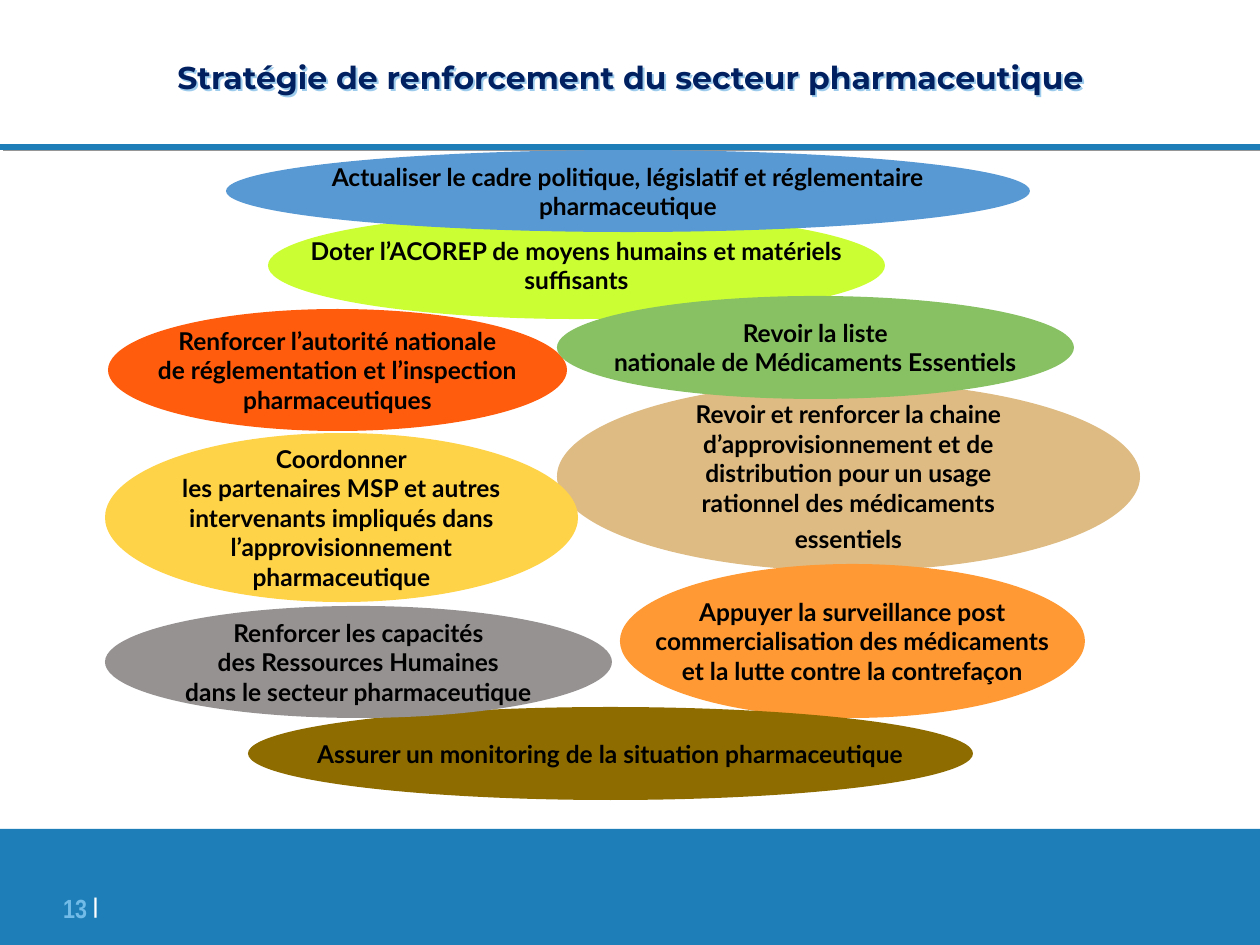
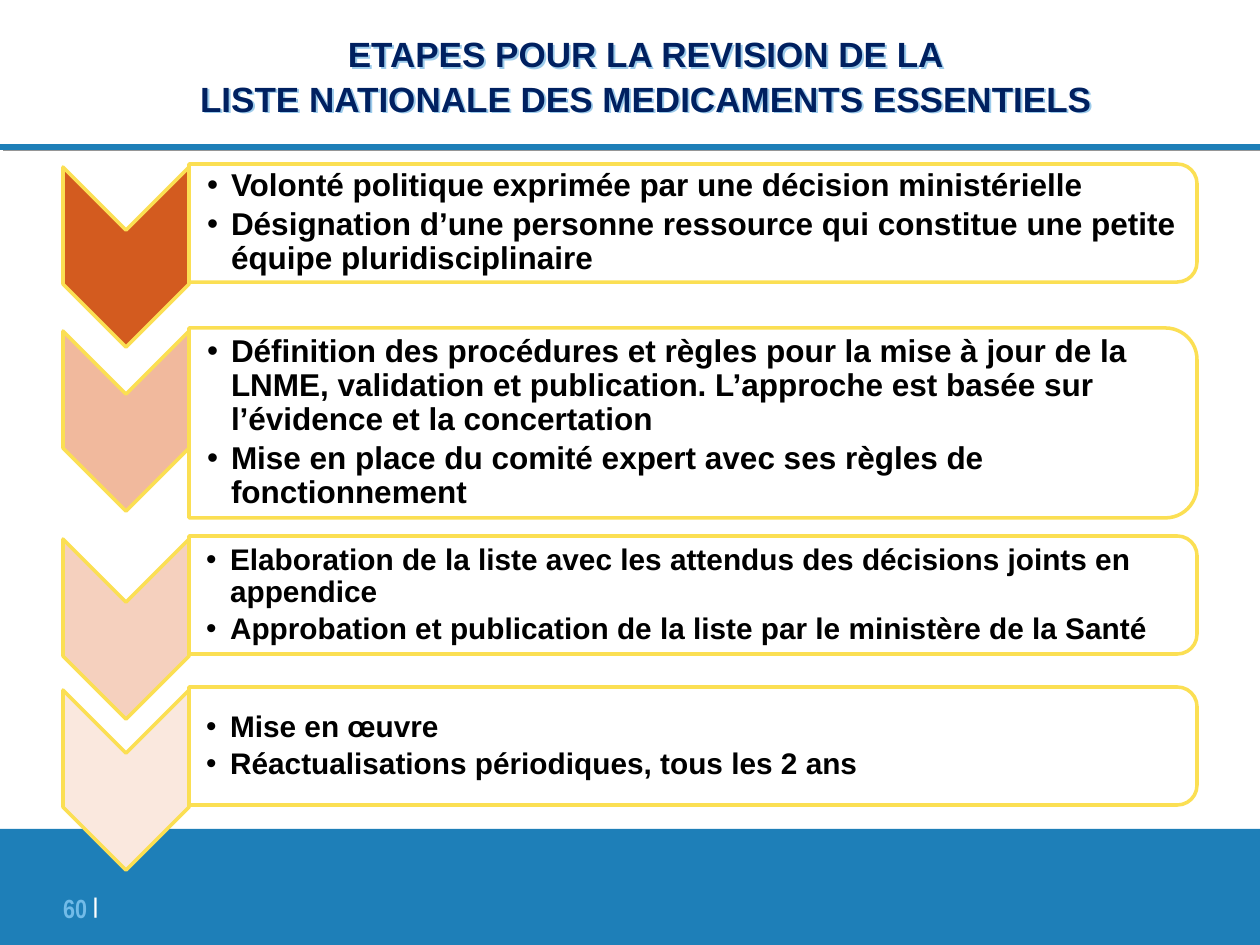
from dataclasses import dataclass

from lxml import etree
from pptx import Presentation
from pptx import util as u
from pptx.dml.color import RGBColor
from pptx.enum import shapes, text
from pptx.oxml import ns

PX_PER_INCH = 126
SLIDE_WIDTH, SLIDE_HEIGHT = 1260, 945


@dataclass(frozen=True)
class Theme:
    band: str = "1E7FB8"
    rule_shadow: str = "969696"
    title: str = "002060"
    title_shadow: str = "9CCBEB"
    number: str = "72BBE8"
    white: str = "FFFFFF"
    ink: str = "000000"
    outline: str = "FBDF53"
    font: str = "Arial"
    number_font: str = "Arial Narrow"
    action_font: str = "Lato"
    strategy_font: str = "Montserrat"
    number_size: int = 15
    bar_size: int = 21
    action_size: int = 14


THEME = Theme()

# left, top, width, height, fill, lines; listed from back to front
ACTIONS = [
    (268, 212, 617, 107, "CCFF33",
     ["Doter l’ACOREP de moyens humains et matériels", "suffisants"]),
    (226, 150, 804, 82, "5899D4",
     ["Actualiser le cadre politique, législatif et réglementaire",
      "pharmaceutique"]),
    (108, 309, 459, 122, "FF5D0D",
     ["Renforcer l’autorité nationale",
      "de réglementation et l’inspection", "pharmaceutiques"]),
    (557, 382, 583, 189, "DEBB82",
     ["Revoir et renforcer la chaine", "d’approvisionnement et de",
      "distribution pour un usage", "rationnel des médicaments",
      "essentiels"]),
    (620, 564, 465, 154, "FF9933",
     ["Appuyer la surveillance post", "commercialisation des médicaments",
      "et la lutte contre la contrefaçon"]),
    (105, 433, 473, 169, "FFD347",
     ["Coordonner", "les partenaires MSP et autres",
      "intervenants impliqués dans", "l’approvisionnement",
      "pharmaceutique"]),
    (248, 707, 725, 93, "8E6C00",
     ["Assurer un monitoring de la situation pharmaceutique"]),
    (105, 606, 507, 112, "969292",
     ["Renforcer les capacités", "des Ressources Humaines",
      "dans le secteur pharmaceutique"]),
    (557, 296, 517, 103, "87C163",
     ["Revoir la liste", "nationale de Médicaments Essentiels"]),
]

# top, height, chevron fill, text size, items
STEPS = [
    (164, 118, "D35B1F", 18,
     ["Volonté politique exprimée par une décision ministérielle",
      "Désignation d’une personne ressource qui constitue une petite "
      "équipe pluridisciplinaire"]),
    (328, 190, "F1B99D", 18,
     ["Définition des procédures et règles pour la mise à jour de la LNME, "
      "validation et publication. L’approche est basée sur l’évidence et "
      "la concertation",
      "Mise en place du comité expert avec ses règles de fonctionnement"]),
    (536, 118, "F5D0BE", 17,
     ["Elaboration de la liste avec les attendus des décisions joints en "
      "appendice",
      "Approbation et publication de la liste par le ministère de la Santé"]),
    (687, 118, "FAE8DE", 17,
     ["Mise en œuvre", "Réactualisations périodiques, tous les 2 ans"]),
]


def px(length):
    return u.Emu(round(length * u.Inches(1) / PX_PER_INCH))


def place(shape, left, top, width, height):
    shape.left, shape.top = px(left), px(top)
    shape.width, shape.height = px(width), px(height)


def set_margins(frame, left=0, others=0):
    frame.margin_left = px(left)
    frame.margin_top = frame.margin_right = frame.margin_bottom = px(others)


def add_run(paragraph, words, size, color=THEME.ink, font=THEME.font, bold=True):
    run = paragraph.add_run()
    run.text = words
    run.font.size, run.font.name, run.font.bold = u.Pt(size), font, bold
    run.font.color.rgb = RGBColor.from_string(color)
    return run


def add_shadow(shape, color, distance, degrees):
    """Distance is in points, the angle runs clockwise from the right."""
    effects = etree.SubElement(shape.element.spPr, ns.qn("a:effectLst"))
    shadow = etree.SubElement(effects, ns.qn("a:outerShdw"),
                              dist=str(int(u.Pt(distance))),
                              dir=str(degrees * 60000), algn="ctr",
                              rotWithShape="0")
    etree.SubElement(shadow, ns.qn("a:srgbClr"), val=color)


def add_shape(slide, kind, box, fill, outline=None):
    shape = slide.shapes.add_shape(kind, *map(px, box))
    shape.shadow.inherit = False
    shape.fill.solid()
    shape.fill.fore_color.rgb = RGBColor.from_string(fill)
    if outline:
        shape.line.color.rgb = RGBColor.from_string(outline)
        shape.line.width = u.Pt(2)
    else:
        shape.line.fill.background()
    return shape


def add_frame(slide, number):
    """Draw the rule, the bottom band and the page number."""
    rule = slide.shapes.add_connector(
        shapes.MSO_CONNECTOR.STRAIGHT, 0, px(147), px(SLIDE_WIDTH), px(147))
    rule.line.color.rgb = RGBColor.from_string(THEME.band)
    rule.line.width = u.Pt(3)
    add_shadow(rule, THEME.rule_shadow, 2.2, 27)
    add_shape(slide, shapes.MSO_SHAPE.RECTANGLE,
              (0, 829, SLIDE_WIDTH, SLIDE_HEIGHT - 829), THEME.band)

    frame = slide.shapes.add_textbox(*map(px, (49, 882, 49, 45))).text_frame
    frame.word_wrap = True
    set_margins(frame)
    paragraph = frame.paragraphs[0]
    paragraph.alignment = text.PP_ALIGN.RIGHT
    add_run(paragraph, f"{number} ", THEME.number_size, THEME.number,
            THEME.number_font)
    bar = add_run(paragraph, "|", THEME.bar_size, THEME.white,
                  THEME.number_font)
    bar.font._element.set("baseline", "14000")


def set_title(slide, box, lines, size, font):
    title = slide.shapes.title
    place(title, *box)
    add_shadow(title, THEME.title_shadow, 1.6, 45)
    frame = title.text_frame
    frame.auto_size = text.MSO_AUTO_SIZE.NONE
    frame.vertical_anchor = text.MSO_ANCHOR.MIDDLE
    set_margins(frame)
    paragraph = frame.paragraphs[0]
    paragraph.alignment = text.PP_ALIGN.CENTER
    paragraph.line_spacing = 1.05
    for index, line in enumerate(lines):
        if index:
            paragraph.add_line_break()
        add_run(paragraph, line, size, THEME.title, font)


def add_action(slide, box, fill, lines):
    ellipse = add_shape(slide, shapes.MSO_SHAPE.OVAL, box, fill)
    frame = ellipse.text_frame
    frame.word_wrap = False
    frame.vertical_anchor = text.MSO_ANCHOR.MIDDLE
    for index, line in enumerate(lines):
        paragraph = frame.add_paragraph() if index else frame.paragraphs[0]
        paragraph.alignment = text.PP_ALIGN.CENTER
        if line == "essentiels":
            paragraph.space_before = u.Pt(4)
        add_run(paragraph, line, THEME.action_size, font=THEME.action_font)


def add_quarter_turned(slide, kind, box, fill):
    """Add an outlined shape turned by 90 degrees that covers the box."""
    left, top, width, height = box
    shift = (width - height) / 2
    shape = add_shape(slide, kind, (left + shift, top - shift, height, width),
                      fill, THEME.outline)
    shape.rotation = 90
    return shape


def fill_list(placeholder, items, size):
    frame = placeholder.text_frame
    frame.auto_size = text.MSO_AUTO_SIZE.NONE
    frame.word_wrap = True
    frame.vertical_anchor = text.MSO_ANCHOR.MIDDLE
    set_margins(frame, left=size, others=1)
    for index, item in enumerate(items):
        paragraph = frame.add_paragraph() if index else frame.paragraphs[0]
        properties = paragraph._p.get_or_add_pPr()
        properties.set("marL", str(px(24)))
        properties.set("indent", str(-px(24)))
        etree.SubElement(properties, ns.qn("a:buChar"), char="•")
        paragraph.line_spacing = 0.9
        paragraph.space_before = u.Pt(0)
        paragraph.space_after = u.Pt(2.7)
        add_run(paragraph, item, size)


def add_step(slide, placeholder, top, height, fill, size, items):
    left, width = 189, 1008
    add_quarter_turned(slide, shapes.MSO_SHAPE.CHEVRON,
                       (left - 126, top + 3, 126, 180), fill)
    panel = add_quarter_turned(slide, shapes.MSO_SHAPE.ROUND_2_SAME_RECTANGLE,
                               (left, top, width, height), THEME.white)
    color = panel.element.spPr.find(f".//{ns.qn('a:srgbClr')}")
    etree.SubElement(color, ns.qn("a:alpha"), val="90000")

    inset = round(height / 20)
    place(placeholder, left, top + inset, width - inset, height - 2 * inset)
    fill_list(placeholder, items, size)
    slide.shapes.element.append(placeholder.element)  # above its panel


def build_strategy(presentation):
    slide = presentation.slides.add_slide(
        presentation.slide_layouts.get_by_name("Title Only"))
    add_frame(slide, 13)
    set_title(slide, (120, 49, 1021, 54),
              ["Stratégie de renforcement du secteur pharmaceutique"],
              18, THEME.strategy_font)
    for *box, fill, lines in ACTIONS:
        add_action(slide, box, fill, lines)


def build_revision_steps(presentation):
    slide = presentation.slides.add_slide(
        presentation.slide_layouts.get_by_name("Comparison"))
    add_frame(slide, 60)
    set_title(slide, (113, -4, 1066, 158),
              ["ETAPES POUR LA REVISION DE LA",
               "LISTE NATIONALE DES MEDICAMENTS ESSENTIELS"],
              20, THEME.font)
    bodies = list(slide.placeholders)[1:]
    for body, step in zip(bodies, STEPS):
        add_step(slide, body, *step)


def main():
    presentation = Presentation()
    presentation.slide_width = px(SLIDE_WIDTH)
    presentation.slide_height = px(SLIDE_HEIGHT)
    build_strategy(presentation)
    build_revision_steps(presentation)
    presentation.save("out.pptx")


if __name__ == "__main__":
    main()
